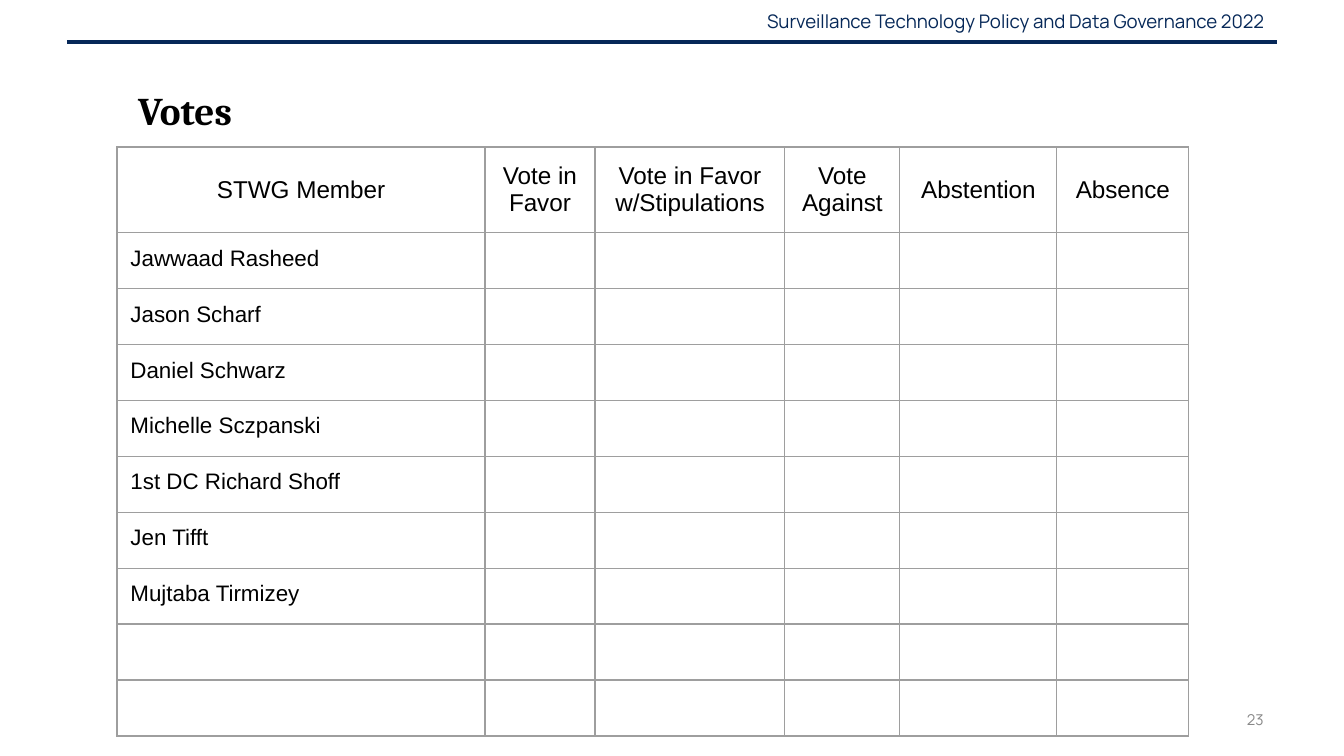
from lxml import etree
from pptx import Presentation
from pptx import util as u
from pptx.dml.color import RGBColor
from pptx.enum import shapes, text
from pptx.oxml.ns import qn

PX = 914400 / 134.4
NAVY, GREY, BLACK, RULE = "062858", "888888", "000000", "9E9E9E"

HEADERS = ["STWG Member", "Vote in Favor", "Vote in Favor w/Stipulations",
           "Vote Against", "Abstention", "Absence"]
MEMBERS = ["Jawwaad Rasheed", "Jason Scharf", "Daniel Schwarz",
           "Michelle Sczpanski", "1st DC Richard Shoff", "Jen Tifft",
           "Mujtaba Tirmizey"]
SPARE_ROWS = 2
COL_WIDTHS = [368, 110, 190, 115, 157, 132]
HEADER_HEIGHT, ROW_HEIGHT = 81, 56

LEFT, CENTER, RIGHT = (text.PP_ALIGN.LEFT, text.PP_ALIGN.CENTER,
                       text.PP_ALIGN.RIGHT)
TOP, MIDDLE = text.MSO_ANCHOR.TOP, text.MSO_ANCHOR.MIDDLE


def px(n):
    return u.Emu(round(n * PX))


def color(value):
    return RGBColor.from_string(value)


def assign(obj, values):
    for name, value in values.items():
        setattr(obj, name, value)


class Deck:
    def __init__(self, width, height):
        self.prs = Presentation()
        assign(self.prs, {"slide_width": px(width), "slide_height": px(height)})
        self.s = self.prs.slides.add_slide(self.prs.slide_layouts[6])

    def fill_text(self, tf, words, font, size, ink, bold=False, **paragraph):
        p = tf.paragraphs[0]
        assign(p, paragraph)
        r = p.add_run()
        r.text = words
        assign(r.font, {"name": font, "size": u.Pt(size), "bold": bold})
        r.font.color.rgb = color(ink)

    def label(self, box, words, font, size, ink, anchor=TOP, **style):
        tf = self.s.shapes.add_textbox(*map(px, box)).text_frame
        assign(tf, {"word_wrap": True, "vertical_anchor": anchor})
        self.fill_text(tf, words, font, size, ink, **style)

    def line(self, x1, y1, x2, y2, ink, weight):
        sp = self.s.shapes.add_connector(
            shapes.MSO_CONNECTOR.STRAIGHT, *map(px, (x1, y1, x2, y2)))
        sp.line.color.rgb = color(ink)
        sp.line.width = u.Pt(weight)
        etree.SubElement(sp._element.spPr, qn("a:effectLst"))

    def border(self, cell, ink, weight):
        tc_pr = cell._tc.get_or_add_tcPr()
        for side in ("a:lnL", "a:lnR", "a:lnT", "a:lnB"):
            ln = etree.SubElement(tc_pr, qn(side), w=str(u.Pt(weight)))
            fill = etree.SubElement(ln, qn("a:solidFill"))
            etree.SubElement(fill, qn("a:srgbClr"), val=ink)

    def cell(self, cell, words, size, align, anchor):
        margins = ("margin_left", "margin_top", "margin_right", "margin_bottom")
        assign(cell, dict.fromkeys(margins, u.Inches(0.1)))
        cell.vertical_anchor = anchor
        self.border(cell, RULE, 0.75)
        cell.fill.background()
        if words:
            self.fill_text(cell.text_frame, words, "Arial", size, BLACK,
                           alignment=align)
        else:  # keeps an empty row from growing to the default text size
            etree.SubElement(cell.text_frame.paragraphs[0]._p,
                             qn("a:endParaRPr"), sz=str(size * 100))

    def table(self, left, top, rows, widths, heights):
        box = (left, top, sum(widths), sum(heights))
        tbl = self.s.shapes.add_table(
            len(rows), len(widths), *map(px, box)).table
        assign(tbl, {"first_row": False, "horz_banding": False})
        for column, width in zip(tbl.columns, widths):
            column.width = px(width)
        for i, (row, height) in enumerate(zip(rows, heights)):
            tbl.rows[i].height = px(height)
            style = (12, LEFT, TOP) if i else (13, CENTER, MIDDLE)
            for j, words in enumerate(row):
                self.cell(tbl.cell(i, j), words, *style)


def main():
    deck = Deck(1344, 756)
    deck.label((700, 1, 577, 40),
               "Surveillance Technology Policy and Data Governance 2022",
               "Manrope", 10, NAVY, MIDDLE, alignment=RIGHT)
    deck.label((964, 700, 313, 40), "23", "Manrope", 8, GREY, MIDDLE,
               alignment=RIGHT)
    deck.line(67, 42, 1277, 42, NAVY, 2.25)
    deck.label((125, 73, 133, 116), "Votes", "Cambria", 21, BLACK, bold=True,
               line_spacing=1.15, space_before=u.Pt(12))

    blanks = [""] * (len(HEADERS) - 1)
    body = [[name] + blanks for name in MEMBERS + [""] * SPARE_ROWS]
    deck.table(117, 147, [HEADERS] + body, COL_WIDTHS,
               [HEADER_HEIGHT] + [ROW_HEIGHT] * len(body))
    deck.prs.save("out.pptx")


if __name__ == "__main__":
    main()
